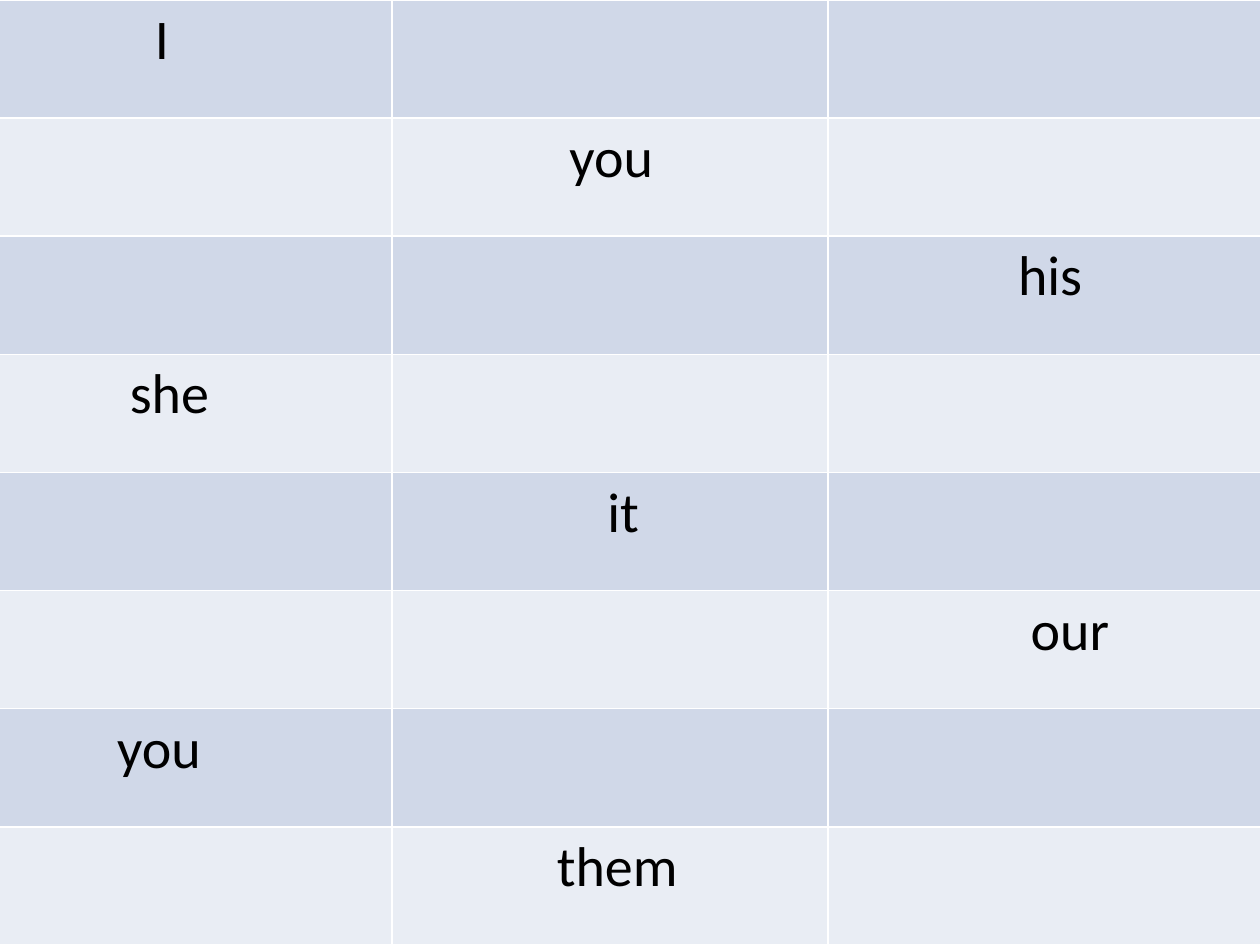
from lxml.etree import SubElement
from pptx import Presentation
from pptx.dml.color import RGBColor
from pptx.oxml.ns import qn
from pptx.util import Inches, Pt

BLACK = RGBColor(0x00, 0x00, 0x00)
WHITE = RGBColor(0xFF, 0xFF, 0xFF)
BANDS = (RGBColor(0xD0, 0xD8, 0xE8), RGBColor(0xE9, 0xED, 0xF4))

# One pronoun per row, stepping across the columns, with its left margin in inches
PRONOUNS = [("I", 1.51), ("you", 1.41), ("his", 1.51), ("she", 1.31),
            ("it", 1.71), ("our", 1.61), ("you", 1.21), ("them", 1.31)]
COLUMN_WIDTHS = (3.39, 3.46, 3.46)


def add_borders(cell):
    properties = cell._tc.get_or_add_tcPr()
    for side in ("lnL", "lnR", "lnT", "lnB"):
        line = SubElement(properties, qn(f"a:{side}"), w=str(Pt(1)))
        fill = SubElement(line, qn("a:solidFill"))
        SubElement(fill, qn("a:srgbClr"), val=str(WHITE))


deck = Presentation()
deck.slide_width, deck.slide_height = Inches(10), Inches(7.5)
slide = deck.slides.add_slide(deck.slide_layouts[6])

table = slide.shapes.add_table(
    len(PRONOUNS), len(COLUMN_WIDTHS), Inches(-0.28), 0,
    Inches(sum(COLUMN_WIDTHS)), deck.slide_height).table
table.first_row = False
for column, width in zip(table.columns, COLUMN_WIDTHS):
    column.width = Inches(width)

for row_index, (pronoun, margin) in enumerate(PRONOUNS):
    for column_index in range(len(COLUMN_WIDTHS)):
        cell = table.cell(row_index, column_index)
        add_borders(cell)
        cell.fill.solid()
        cell.fill.fore_color.rgb = BANDS[row_index % 2]

    cell = table.cell(row_index, row_index % len(COLUMN_WIDTHS))
    cell.margin_left = Inches(margin)
    cell.text_frame.text = pronoun
    font = cell.text_frame.paragraphs[0].runs[0].font
    font.name, font.size = "Calibri", Pt(32)
    font.color.rgb = BLACK

deck.save("out.pptx")
